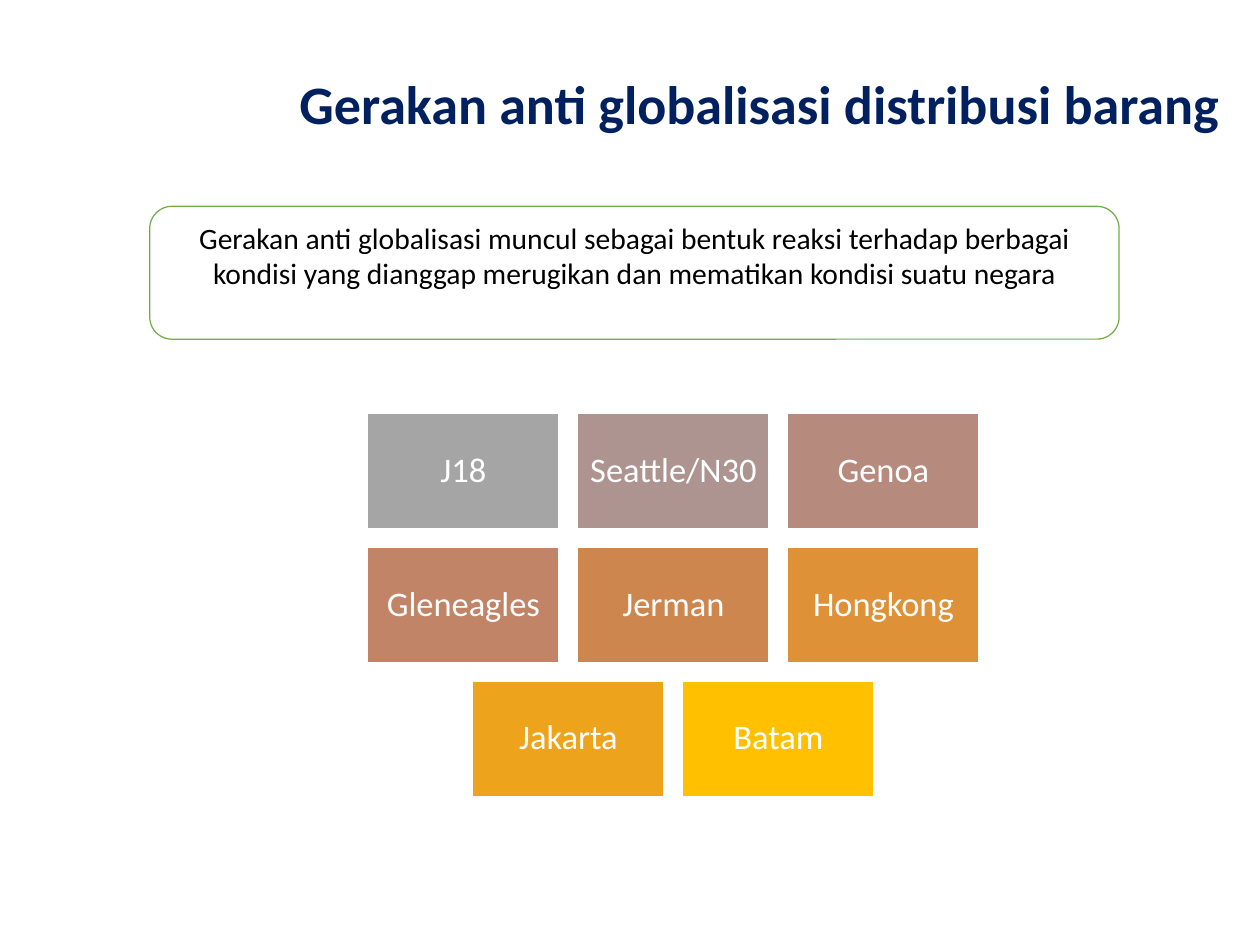
from pptx import Presentation
from pptx.dml.color import RGBColor
from pptx.enum.shapes import MSO_SHAPE
from pptx.enum.text import MSO_ANCHOR, PP_ALIGN
from pptx.util import Inches, Pt

RECTANGLE, ROUNDED = MSO_SHAPE.RECTANGLE, MSO_SHAPE.ROUNDED_RECTANGLE
TOP, MIDDLE = MSO_ANCHOR.TOP, MSO_ANCHOR.MIDDLE
LEFT, CENTER = PP_ALIGN.LEFT, PP_ALIGN.CENTER

FONT = "Calibri"
COLORS = {"white": "FFFFFF", "black": "000000", "navy": "002060", "green": "70AD47"}

# Movements, row by row, with the fill of each tile
MOVEMENT_ROWS = [
    [("J18", "A5A5A5"), ("Seattle/N30", "AD9490"), ("Genoa", "B78A7E")],
    [("Gleneagles", "C28467"), ("Jerman", "CE864F"), ("Hongkong", "DE9137")],
    [("Jakarta", "EDA31C"), ("Batam", "FFC000")],
]
GRID_CENTER, GRID_TOP = 7.6, 4.67
TILE_WIDTH, TILE_HEIGHT, TILE_GAP = 2.16, 1.3, 0.21


def write_text(shape, text, size, color, bold=False, align=CENTER, anchor=MIDDLE,
               line_spacing=1.0, inset_x=0.1, inset_y=0.05):
    frame = shape.text_frame
    frame.word_wrap = True
    frame.vertical_anchor = anchor
    frame.margin_left = frame.margin_right = Inches(inset_x)
    frame.margin_top = frame.margin_bottom = Inches(inset_y)
    frame.text = text
    paragraph = frame.paragraphs[0]
    paragraph.alignment = align
    paragraph.line_spacing = line_spacing
    font = paragraph.runs[0].font
    font.name, font.size, font.bold = FONT, Pt(size), bold
    font.color.rgb = RGBColor.from_string(color)


def add_box(slide, kind, left, top, width, height, fill, line):
    box = slide.shapes.add_shape(
        kind, Inches(left), Inches(top), Inches(width), Inches(height))
    box.shadow.inherit = False
    box.fill.solid()
    box.fill.fore_color.rgb = RGBColor.from_string(fill)
    box.line.color.rgb = RGBColor.from_string(line)
    box.line.width = Pt(1)
    return box


def add_title(slide, text):
    title = slide.shapes.title
    title.left, title.top = Inches(3.28), Inches(0.58)
    title.width, title.height = Inches(10.94), Inches(1.25)
    write_text(title, text, 44, COLORS["navy"], bold=True, align=LEFT, line_spacing=0.9)


def add_movements(slide):
    step_x, step_y = TILE_WIDTH + TILE_GAP, TILE_HEIGHT + TILE_GAP
    for row, movements in enumerate(MOVEMENT_ROWS):
        row_left = GRID_CENTER - (len(movements) * step_x - TILE_GAP) / 2
        for column, (movement, fill) in enumerate(movements):
            tile = add_box(slide, RECTANGLE, row_left + column * step_x,
                           GRID_TOP + row * step_y, TILE_WIDTH, TILE_HEIGHT,
                           fill, COLORS["white"])
            write_text(tile, movement, 28, COLORS["white"], line_spacing=0.9,
                       inset_x=0.12, inset_y=0.12)


def add_summary(slide, text):
    summary = add_box(slide, ROUNDED, 1.69, 2.33, 10.94, 1.5,
                      COLORS["white"], COLORS["green"])
    write_text(summary, text, 24, COLORS["black"], anchor=TOP, inset_y=0.08)


def main():
    deck = Presentation()
    deck.slide_width, deck.slide_height = Inches(14.22), Inches(10.67)
    slide = deck.slides.add_slide(deck.slide_layouts.get_by_name("Title Only"))

    add_title(slide, "Gerakan anti globalisasi distribusi barang")
    add_movements(slide)
    add_summary(slide, "Gerakan anti globalisasi muncul sebagai bentuk reaksi terhadap "
                       "berbagai kondisi yang dianggap merugikan dan mematikan kondisi "
                       "suatu negara")
    deck.save("out.pptx")


if __name__ == "__main__":
    main()
